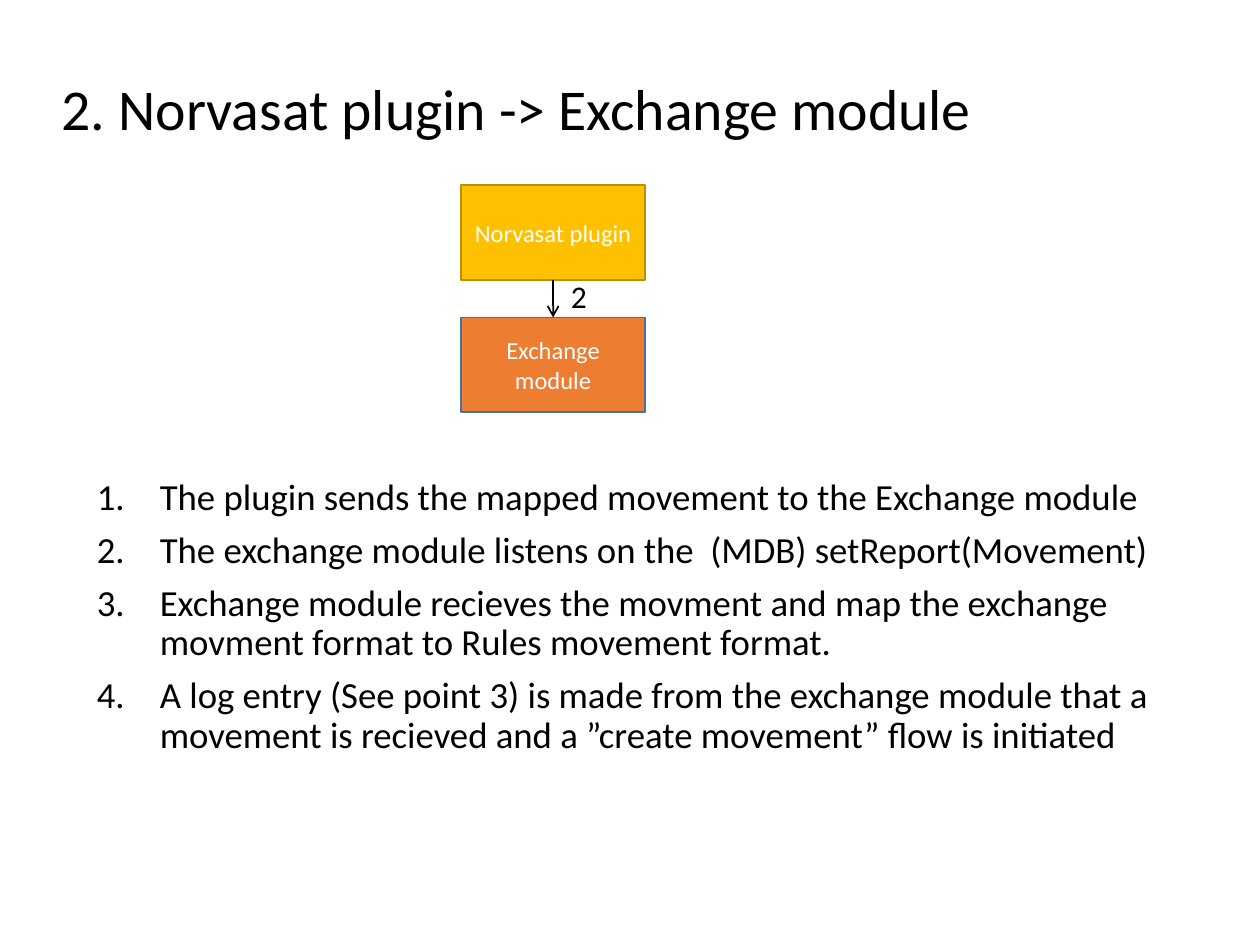
import pptx
import pptx.dml.color
import pptx.enum.shapes
import pptx.enum.text
import pptx.oxml.ns
import pptx.util
from lxml import etree

Inches = pptx.util.Inches
Pt = pptx.util.Pt
RGBColor = pptx.dml.color.RGBColor
Align = pptx.enum.text.PP_ALIGN
Anchor = pptx.enum.text.MSO_ANCHOR
qn = pptx.oxml.ns.qn

BLACK = RGBColor(0x00, 0x00, 0x00)
WHITE = RGBColor(0xFF, 0xFF, 0xFF)
GOLD = RGBColor(0xFF, 0xC0, 0x00)
DARK_GOLD = RGBColor(0xBD, 0x8E, 0x00)
ORANGE = RGBColor(0xED, 0x7D, 0x31)
BLUE = RGBColor(0x43, 0x73, 0x9E)

MODULE_LEFT, MODULE_WIDTH, MODULE_HEIGHT = 3.66, 1.46, 0.75
PLUGIN_TOP, MODULE_PITCH = 1.47, 1.05

STEPS = [
    "The plugin sends the mapped movement to the Exchange module",
    "The exchange module listens on the  (MDB) setReport(Movement)",
    "Exchange module recieves the movment and map the exchange movment format to Rules movement format.",
    "A log entry (See point 3) is made from the exchange module that a movement is recieved and a ”create movement” flow is initiated",
]


class FlowPage:
    font_name = "Calibri"
    line_width = Pt(1)

    def __init__(self, page):
        self.page = page

    def style(self, para, size, color, align=Align.LEFT):
        para.alignment = align
        para.font.name = self.font_name
        para.font.size = Pt(size)
        para.font.color.rgb = color

    def text(self, left, top, width, height, words, size, align=Align.LEFT,
             anchor=Anchor.TOP, wrap=True):
        box = self.page.shapes.add_textbox(
            Inches(left), Inches(top), Inches(width), Inches(height))
        frame = box.text_frame
        frame.word_wrap = wrap
        frame.vertical_anchor = anchor
        frame.text = words
        for para in frame.paragraphs:
            self.style(para, size, BLACK, align)
        return box

    def title(self, left, top, width, height, words):
        box = self.text(left, top, width, height, words, 33, anchor=Anchor.MIDDLE)
        box.text_frame.paragraphs[0].line_spacing = 0.9

    def numbered_list(self, left, top, width, height, items):
        box = self.text(left, top, width, height, "\n".join(items), 21)
        for para in box.text_frame.paragraphs:
            para.line_spacing = 0.9
            para.space_before = Pt(7.5)
            properties = para._p.get_or_add_pPr()
            properties.set("marL", str(Inches(0.5)))
            properties.set("indent", str(Inches(-0.5)))
            font = etree.Element(qn("a:buFont"), typeface="+mj-lt")
            number = etree.Element(qn("a:buAutoNum"), type="arabicPeriod")
            properties.find(qn("a:spcBef")).addnext(font)
            font.addnext(number)

    def module(self, top, words, fill, line):
        box = self.page.shapes.add_shape(
            pptx.enum.shapes.MSO_SHAPE.RECTANGLE, Inches(MODULE_LEFT),
            Inches(top), Inches(MODULE_WIDTH), Inches(MODULE_HEIGHT))
        box.shadow.inherit = False
        box.fill.solid()
        box.fill.fore_color.rgb = fill
        box.line.color.rgb = line
        box.line.width = self.line_width
        frame = box.text_frame
        frame.word_wrap = True
        frame.vertical_anchor = Anchor.MIDDLE
        frame.text = words
        self.style(frame.paragraphs[0], 14, WHITE, Align.CENTER)
        return box

    def arrow_down(self, upper, lower):
        arrow = self.page.shapes.add_connector(
            pptx.enum.shapes.MSO_CONNECTOR.STRAIGHT, 0, 0, 0, 0)
        arrow.begin_connect(upper, 2)
        arrow.end_connect(lower, 0)
        arrow.line.color.rgb = BLACK
        arrow.line.width = self.line_width
        etree.SubElement(arrow.line._get_or_add_ln(), qn("a:tailEnd"), type="arrow")
        etree.SubElement(arrow._element.spPr, qn("a:effectLst"))


def main():
    deck = pptx.Presentation()
    deck.slide_width = Inches(10)
    deck.slide_height = Inches(7.5)
    flow = FlowPage(deck.slides.add_slide(deck.slide_layouts[6]))

    flow.title(0.39, 0.16, 8.62, 1.45, "2. Norvasat plugin -> Exchange module")
    flow.numbered_list(0.67, 3.75, 8.74, 3.62, STEPS)
    plugin = flow.module(PLUGIN_TOP, "Norvasat plugin", GOLD, DARK_GOLD)
    exchange = flow.module(PLUGIN_TOP + MODULE_PITCH, "Exchange module", ORANGE, BLUE)
    flow.arrow_down(plugin, exchange)
    flow.text(4.43, 2.15, 0.33, 0.4, "2", 18, align=Align.CENTER, wrap=False)

    deck.save("out.pptx")


if __name__ == "__main__":
    main()
